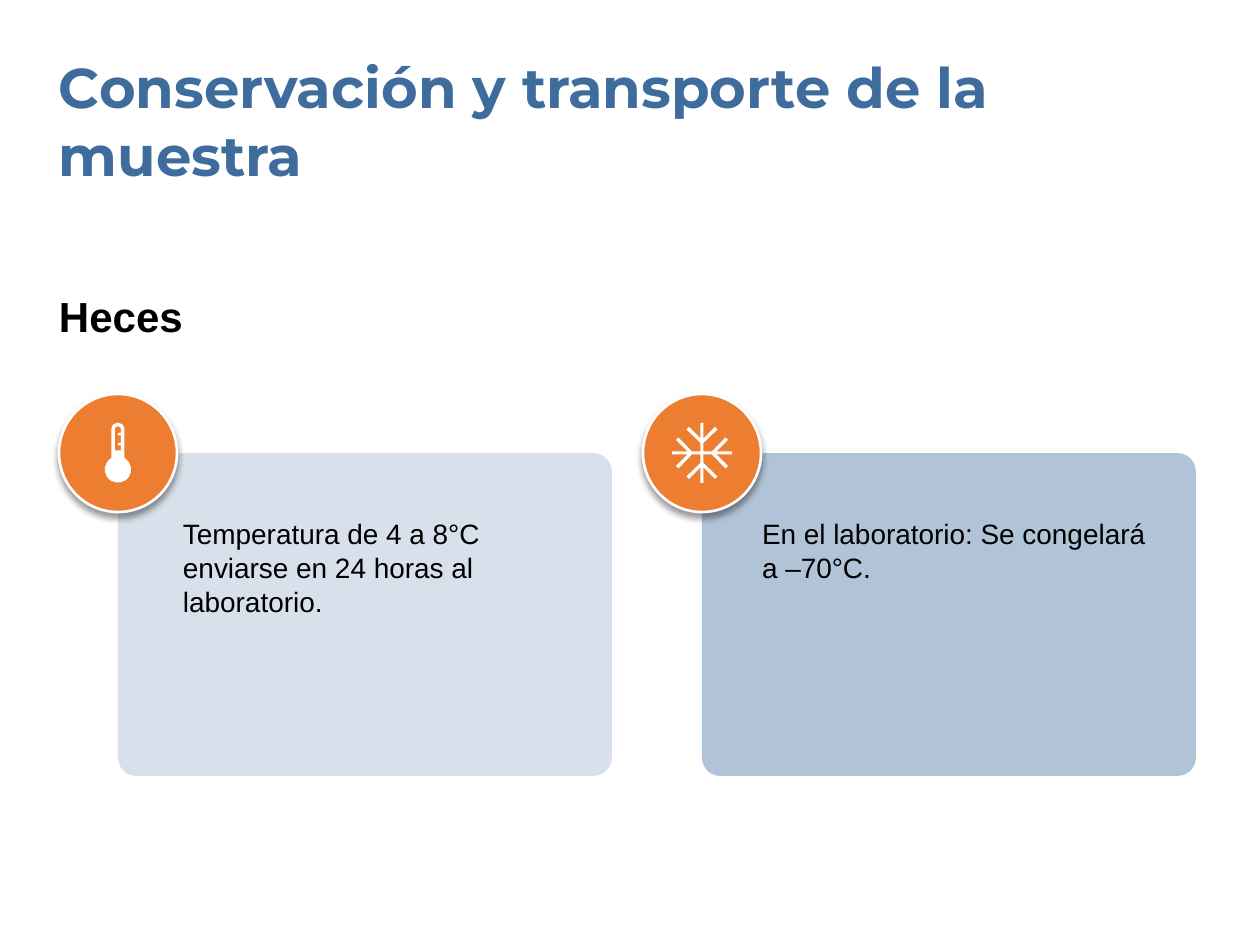
from dataclasses import dataclass
from math import cos, radians, sin

from lxml.etree import SubElement
from pptx import Presentation
from pptx.dml.color import RGBColor
from pptx.enum.shapes import MSO_SHAPE as Preset
from pptx.oxml.ns import qn
from pptx.util import Emu, Pt

PX = 914400 / 126
HALF_PX = PX / 2
COLORS = {
    "blue": "3D6C9D",
    "orange": "ED7D31",
    "white": "FFFFFF",
    "black": "000000",
}


@dataclass
class Box:
    left: int
    top: int
    width: int
    height: int

    def inner(self, left, top, width, height):
        return Box(self.left + left, self.top + top, width, height)

    def emu(self):
        return [px(v) for v in (self.left, self.top, self.width, self.height)]


def px(value):
    return Emu(round(value * PX))


def color(name):
    return RGBColor.from_string(COLORS[name])


def paint(shape, fill):
    shape.shadow.inherit = False
    shape.fill.solid()
    shape.fill.fore_color.rgb = color(fill)
    shape.line.fill.background()


def add_text(page, box, text, size, font="Arial", fill="black", bold=False):
    frame = page.shapes.add_textbox(*box.emu()).text_frame
    frame.word_wrap = True
    frame.margin_left = frame.margin_right = 0
    frame.margin_top = frame.margin_bottom = 0
    para = frame.paragraphs[0]
    para.text = text
    para.font.name = font
    para.font.size = Pt(size)
    para.font.bold = bold
    para.font.color.rgb = color(fill)


def add_card(page, box, opacity):
    card = page.shapes.add_shape(Preset.ROUNDED_RECTANGLE, *box.emu())
    card.adjustments[0] = 0.057
    paint(card, "blue")
    tint = card._element.spPr.find(qn("a:solidFill"))[0]
    SubElement(tint, qn("a:alpha"), val=str(opacity * 1000))


def add_badge(page, box):
    badge = page.shapes.add_shape(Preset.OVAL, *box.emu())
    paint(badge, "orange")
    badge.line.color.rgb = color("white")
    badge.line.width = Pt(1.5)
    effects = badge._element.spPr.find(qn("a:effectLst"))
    shadow = SubElement(effects, qn("a:outerShdw"), blurRad=str(Pt(4)),
                        dist=str(Pt(3)), dir="5400000", rotWithShape="0")
    tint = SubElement(shadow, qn("a:srgbClr"), val=COLORS["black"])
    SubElement(tint, qn("a:alpha"), val="40000")


def arc(center_y, radius, start, end, steps=30):
    angles = [radians(start + (end - start) * i / steps) for i in range(steps + 1)]
    return [(radius * cos(a), center_y + radius * sin(a)) for a in angles]


def thermometer():
    outline = arc(33, 26, -60, 240) + arc(-47, 13, 180, 360)
    ticks = [(6, -40), (0, -40), (0, -35), (6, -35),
             (6, -20), (0, -20), (0, -15), (6, -15)]
    tube = [(-6, -5)] + arc(-47, 6, 180, 360) + ticks + [(6, -5)]
    return [outline, tube]


def snowflake():
    quarter = [(3, -60), (3, -29), (26, -52), (31, -47), (3, -20), (3, -3),
               (20, -3), (47, -31), (52, -26), (29, -3), (60, -3)]
    outline = []
    for _ in range(4):
        outline += quarter
        quarter = [(-y, x) for x, y in quarter]
    return [outline]


def add_icon(page, box, contours):
    first, *holes = contours
    builder = page.shapes.build_freeform(*first[0], scale=HALF_PX)
    builder.add_line_segments(first[1:], close=True)
    for hole in holes:
        builder.move_to(*hole[0])
        builder.add_line_segments(hole[1:], close=True)
    icon = builder.convert_to_shape(px(box.left + box.width / 2),
                                    px(box.top + box.height / 2))
    paint(icon, "white")


def add_panel(page, box, opacity, contours, text, text_left, text_width):
    radius = 59
    badge = box.inner(0, 0, 2 * radius, 2 * radius)
    add_card(page, box.inner(radius, radius, box.width - radius,
                             box.height - radius), opacity)
    add_badge(page, badge)
    add_icon(page, badge, contours)
    add_text(page, box.inner(text_left, 123, text_width, 102), text, 16)


def add_heading(page, box):
    add_text(page, box.inner(0, 0, box.width, 136),
             "Conservación y transporte de la muestra", 32,
             font="Montserrat", fill="blue", bold=True)
    add_text(page, box.inner(0, 238, 989, 50), "Heces", 24, bold=True)


def main():
    deck = Presentation()
    deck.slide_width, deck.slide_height = px(1260), px(945)
    page = deck.slides.add_slide(deck.slide_layouts[6])
    add_heading(page, Box(59, 53, 1077, 288))
    panels = [
        (20, thermometer(),
         "Temperatura de 4 a 8°C enviarse en 24 horas al laboratorio.", 124, 365),
        (40, snowflake(),
         "En el laboratorio: Se congelará a –70°C.", 703 - 59 - 525, 397),
    ]
    for index, panel in enumerate(panels):
        add_panel(page, Box(59 + 584 * index, 394, 553, 382), *panel)
    deck.save("out.pptx")


if __name__ == "__main__":
    main()
